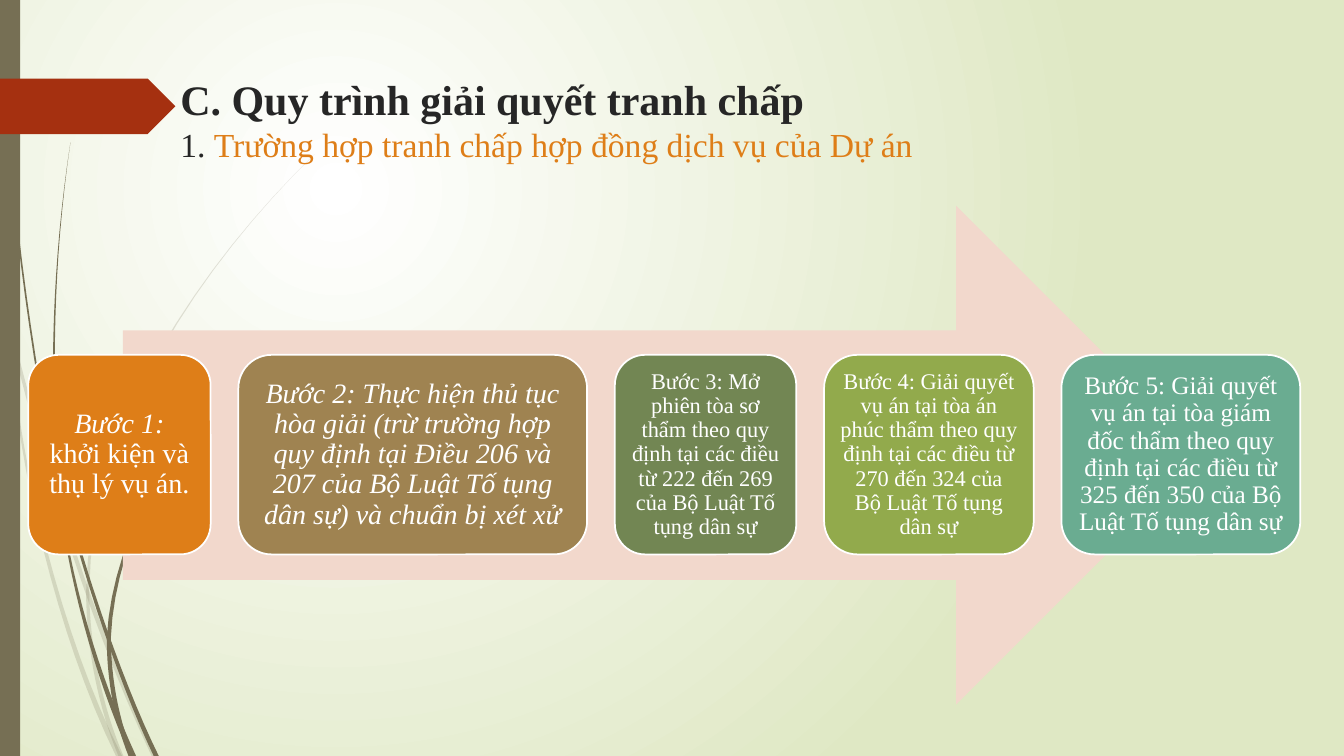
"""Build the slide on the steps for settling a contract dispute."""
import pptx
import pptx.util
import pptx.dml.color
import pptx.enum.shapes
import pptx.enum.text
import pptx.oxml
import pptx.oxml.ns
import lxml.etree

CELL = pptx.util.Inches(0.1)
COLUMNS, ROWS = 133.33, 75
FONT = "Times New Roman"
STEM, WHITE, INK, ORANGE = "766F54", "FFFFFF", "262626", "DE7E18"
STEP_LEFT, STEP_TOP, STEP_ROWS, STEP_GAP = 2.8, 35.2, 19.8, 2.75
STEM_PIECES = 16

# Each stem: start, two control points, end, then its width at start and end.
PALE_STEMS = [
    ((0, 28.5), (3.6, 43.5), (8.2, 60), (15.3, 75), 0.3, 0.5),
    ((1.1, 35), (1.9, 46), (5.8, 63), (11.8, 75), 0.1, 0.6),
    ((31.2, 15.3), (20.2, 26), (8.9, 42.2), (8.7, 58.5), 0, 0.3),
    ((8.7, 58.5), (8.7, 64.5), (10.1, 70.5), (12, 75), 0.3, 0.5),
]
DARK_STEMS = [
    ((0.35, 0), (0.4, 15), (2.4, 31), (5.6, 47.7), 0.1, 0.2),
    ((5.8, 46.5), (7.4, 54), (11.6, 67), (15.5, 75), 0.2, 0.5),
    ((5.7, 47.7), (6.8, 57.5), (9.6, 67), (13.2, 75), 0.1, 0.6),
    ((7, 14.1), (5.2, 26), (5, 38), (5.8, 46.5), 0, 0.3),
    ((26, 34.4), (18.3, 41.6), (11.3, 52.5), (10.8, 63.3), 0, 0.4),
    ((10.8, 63.3), (10.8, 67.5), (11.6, 71.5), (13, 75), 0.4, 0.5),
]

# Each step: columns, fill, text size, inset, then spans as (text, italic).
STEPS = [
    (18.1, ORANGE, 20, 0.9, [("Bước 1: ", True), ("khởi kiện và thụ lý vụ án.", False)]),
    (34.6, "9F8351", 20, 0.9, [("Bước 2: Thực hiện thủ tục hòa giải (trừ trường hợp quy định "
                                "tại Điều 206 và 207 của Bộ Luật Tố tụng dân sự) và chuẩn bị "
                                "xét xử", True)]),
    (18, "728653", 16, 0.6, [("Bước 3: Mở phiên tòa sơ thẩm theo quy định tại các điều từ 222 "
                              "đến 269 của Bộ Luật Tố tụng dân sự", False)]),
    (20.8, "92AA4C", 16, 0.6, [("Bước 4: Giải quyết vụ án tại tòa án phúc thẩm theo quy định "
                                "tại các điều từ 270 đến 324 của Bộ Luật Tố tụng dân sự", False)]),
    (23.7, "6AAC91", 18, 0.7, [("Bước 5: Giải quyết vụ án tại tòa giám đốc thẩm theo quy định "
                                "tại các điều từ 325 đến 350 của Bộ Luật Tố tụng dân sự", False)]),
]


def cells(count):
    """Turn a count of grid cells into a length."""
    return pptx.util.Emu(round(count * CELL))


def color(hex_code):
    """Turn a hex string into a colour."""
    return pptx.dml.color.RGBColor.from_string(hex_code)


def paint(shape, fill, line=None):
    """Give a shape a plain fill and an optional outline."""
    shape.shadow.inherit = False
    shape.fill.solid()
    shape.fill.fore_color.rgb = color(fill)
    if line:
        shape.line.color.rgb = color(line)
        shape.line.width = pptx.util.Pt(1.25)
    else:
        shape.line.fill.background()


def add_background(page):
    """Spread a round gradient from the upper left over the page."""
    fill = page.background.fill
    fill.gradient()
    for stop, position, shade in zip(fill.gradient_stops, (0, 1), (WHITE, "DFE8C4")):
        stop.position = position
        stop.color.rgb = color(shade)
    gradient = page.element.xpath(".//p:bg//a:gradFill")[0]
    for linear in gradient.xpath("./a:lin"):
        gradient.remove(linear)
    gradient.append(pptx.oxml.parse_xml(
        f'<a:path {pptx.oxml.ns.nsdecls("a")} path="circle">'
        '<a:fillToRect l="50000" t="50000" r="100000" b="100000"/></a:path>'))


def curve_point(anchors, t):
    """Find the point at share t of a cubic curve."""
    weights = ((1 - t) ** 3, 3 * t * (1 - t) ** 2, 3 * t ** 2 * (1 - t), t ** 3)
    return [sum(weight * value for weight, value in zip(weights, axis))
            for axis in zip(*anchors)]


def add_stem(page, stem, opacity=100):
    """Draw a curved stem that widens evenly from start to end."""
    *anchors, start_width, end_width = stem
    left_edge, right_edge = [], []
    for piece in range(STEM_PIECES + 1):
        t = piece / STEM_PIECES
        x, y = curve_point(anchors, t)
        half = (start_width + (end_width - start_width) * t) / 2
        left_edge.append((cells(x - half), cells(y)))
        right_edge.append((cells(x + half), cells(y)))
    outline = left_edge + right_edge[::-1]
    builder = page.shapes.build_freeform(*outline[0], scale=1.0)
    builder.add_line_segments(outline[1:], close=True)
    shape = builder.convert_to_shape()
    paint(shape, STEM)
    if opacity < 100:
        shade = shape.element.xpath("./p:spPr/a:solidFill/a:srgbClr")[0]
        alpha = lxml.etree.SubElement(shade, pptx.oxml.ns.qn("a:alpha"))
        alpha.set("val", str(opacity * 1000))


def add_block(page, kind, left, top, width, height, fill, line=None):
    """Draw a preset shape on the grid."""
    block = page.shapes.add_shape(kind, cells(left), cells(top), cells(width), cells(height))
    paint(block, fill, line)
    return block


def add_title(page):
    """Write the heading and its subheading."""
    box = page.shapes.add_textbox(cells(16.9), cells(6.8), cells(95.9), cells(14))
    box.text_frame.word_wrap = True
    para = box.text_frame.paragraphs[0]
    para.font.name = FONT
    for text, size, bold, ink in (
            ("C. Quy trình giải quyết tranh chấp", 30, True, INK),
            ("1. ", 24, False, INK),
            ("Trường hợp tranh chấp hợp đồng dịch vụ của Dự án", 24, False, ORANGE)):
        span = para.add_run()
        span.text = text
        span.font.size = pptx.util.Pt(size)
        span.font.bold = bold
        span.font.color.rgb = color(ink)
        if bold:
            para.add_line_break()


def add_step(page, left, width, fill, size, inset, spans):
    """Draw one rounded step with centred text."""
    step = add_block(page, pptx.enum.shapes.MSO_SHAPE.ROUNDED_RECTANGLE,
                     left, STEP_TOP, width, STEP_ROWS, fill, WHITE)
    frame = step.text_frame
    frame.word_wrap = True
    frame.vertical_anchor = pptx.enum.text.MSO_ANCHOR.MIDDLE
    frame.margin_left = frame.margin_right = cells(inset)
    frame.margin_top = frame.margin_bottom = cells(inset)
    para = frame.paragraphs[0]
    para.alignment = pptx.enum.text.PP_ALIGN.CENTER
    para.line_spacing = 0.9
    para.font.name = FONT
    para.font.size = pptx.util.Pt(size)
    para.font.color.rgb = color(WHITE)
    for text, italic in spans:
        span = para.add_run()
        span.text = text
        span.font.italic = italic


def main():
    """Build and save the deck."""
    shapes = pptx.enum.shapes.MSO_SHAPE
    deck = pptx.Presentation()
    deck.slide_width, deck.slide_height = cells(COLUMNS), cells(ROWS)
    page = deck.slides.add_slide(deck.slide_layouts[6])
    add_background(page)
    for stems, opacity in ((PALE_STEMS, 20), (DARK_STEMS, 100)):
        for stem in stems:
            add_stem(page, stem, opacity)
    add_block(page, shapes.RECTANGLE, 0, 0, 2, ROWS, STEM)
    add_block(page, shapes.PENTAGON, 0, 7.8, 17.4, 5.5, "A53010")
    add_title(page)
    add_block(page, shapes.RIGHT_ARROW, 12.2, 20.4, 107.4, 49.5, "F2D8CC")
    left = STEP_LEFT
    for width, fill, size, inset, spans in STEPS:
        add_step(page, left, width, fill, size, inset, spans)
        left += width + STEP_GAP
    deck.save("out.pptx")


if __name__ == "__main__":
    main()
